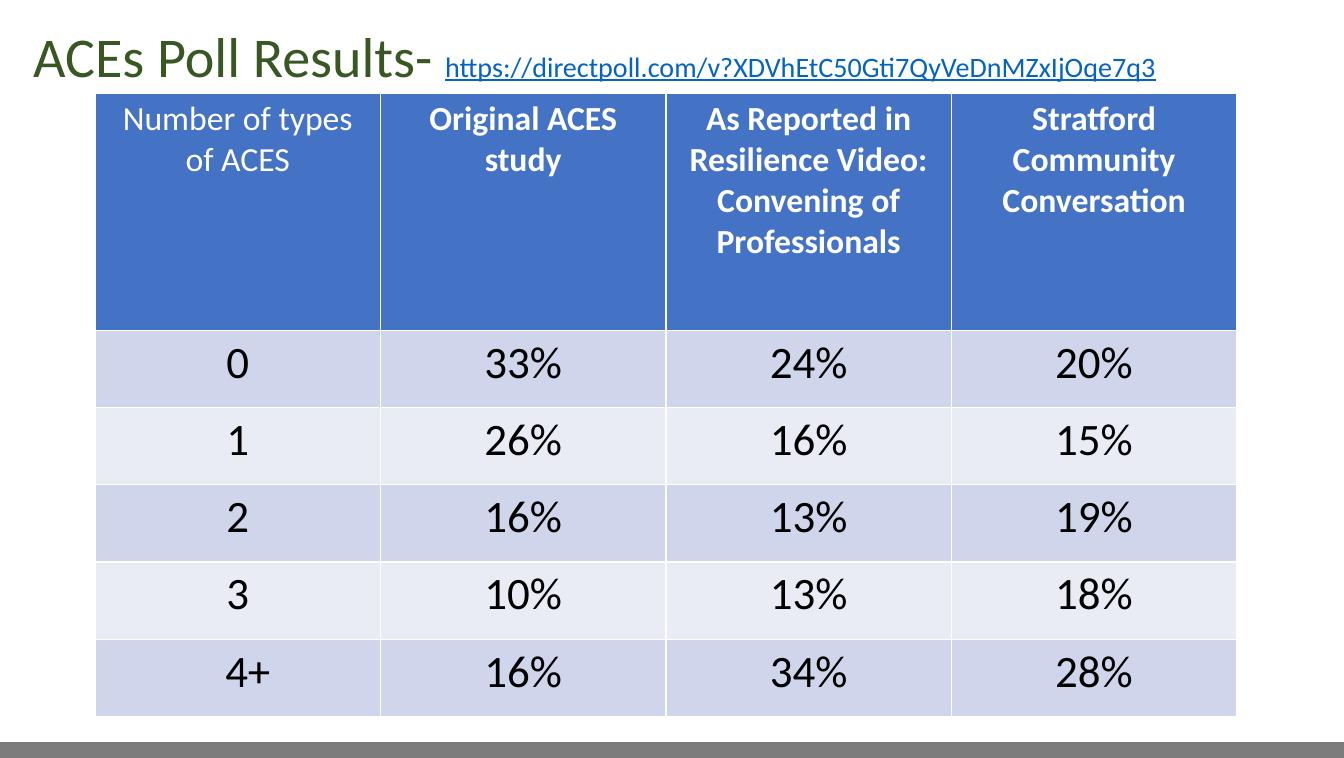
from lxml.etree import SubElement
from pptx import Presentation
from pptx.dml.color import RGBColor
from pptx.enum.shapes import MSO_SHAPE as Shape
from pptx.enum.text import PP_ALIGN as Align
from pptx.oxml.ns import qn
from pptx.util import Inches, Pt

WHITE = RGBColor(0xFF, 0xFF, 0xFF)
BLACK = RGBColor(0, 0, 0)
GREEN = RGBColor(0x38, 0x57, 0x23)
LINK_BLUE = RGBColor(0x05, 0x63, 0xC1)
HEADER_BLUE = RGBColor(0x44, 0x72, 0xC4)
BANDS = RGBColor(0xCF, 0xD5, 0xEA), RGBColor(0xE9, 0xEB, 0xF5)
GRAY = RGBColor(0x7C, 0x7C, 0x7C)

COLUMNS, ROWS = 133, 75
HEADER_ROWS, BODY_ROWS = 23.5, 7.64

HEADINGS = [
    "Number of types of ACES",
    "Original ACES study",
    "As Reported in Resilience Video: Convening of Professionals",
    "Stratford Community Conversation",
]
RESULTS = [
    ["0", "33%", "24%", "20%"],
    ["1", "26%", "16%", "15%"],
    ["2", "16%", "13%", "19%"],
    ["3", "10%", "13%", "18%"],
    ["4+", "16%", "34%", "28%"],
]


class PollSlide:
    """Draws on one slide; lengths are columns and rows of a square grid."""

    font = "Calibri"
    unit = Inches(0.1)

    def __init__(self, prs):
        prs.slide_width = self.length(COLUMNS)
        prs.slide_height = self.length(ROWS)
        self.s = prs.slides.add_slide(prs.slide_layouts[6])

    def length(self, units):
        return round(self.unit * units)

    def box(self, *place):
        return [self.length(units) for units in place]

    def style(self, r, size, color, bold=False, underline=False):
        r.font.name = self.font
        r.font.size = Pt(size)
        r.font.color.rgb = color
        r.font.bold = bold
        r.font.underline = underline

    def bar(self, *place, color):
        sp = self.s.shapes.add_shape(Shape.RECTANGLE, *self.box(*place))
        sp.shadow.inherit = False
        sp.fill.solid()
        sp.fill.fore_color.rgb = color
        sp.line.color.rgb = color
        sp.line.width = Pt(1)

    def title(self, *place, runs):
        tf = self.s.shapes.add_textbox(*self.box(*place)).text_frame
        tf.word_wrap = True
        p = tf.paragraphs[0]
        for text, size, color, underline in runs:
            r = p.add_run()
            r.text = text
            self.style(r, size, color, underline=underline)

    def borders(self, cell):
        tc_pr = cell._tc.get_or_add_tcPr()
        for side in "LRTB":
            ln = SubElement(tc_pr, qn(f"a:ln{side}"), w=str(Pt(1)))
            fill = SubElement(ln, qn("a:solidFill"))
            SubElement(fill, qn("a:srgbClr"), val=str(WHITE))

    def cell(self, cell, text, size, color, fill, bold=False):
        self.borders(cell)
        cell.fill.solid()
        cell.fill.fore_color.rgb = fill
        cell.text_frame.text = text
        p = cell.text_frame.paragraphs[0]
        p.alignment = Align.CENTER
        self.style(p.runs[0], size, color, bold)

    def table(self, left, top, width, headings, rows):
        height = HEADER_ROWS + BODY_ROWS * len(rows)
        frame = self.s.shapes.add_table(
            len(rows) + 1, len(headings), *self.box(left, top, width, height))
        table = frame.table
        for i, row in enumerate(table.rows):
            row.height = self.length(BODY_ROWS if i else HEADER_ROWS)
        for j, heading in enumerate(headings):
            self.cell(table.cell(0, j), heading, 24, WHITE, HEADER_BLUE, bold=j > 0)
        for i, values in enumerate(rows):
            for j, value in enumerate(values):
                self.cell(table.cell(i + 1, j), value, 32, BLACK, BANDS[i % 2])
        return table


def main():
    prs = Presentation()
    slide = PollSlide(prs)
    slide.bar(-0.1, 73.5, 133.2, 1.6, color=GRAY)
    table = slide.table(9.4, 9.2, 113, HEADINGS, RESULTS)
    table.cell(len(RESULTS), 0).margin_left = slide.length(3)
    slide.title(2.3, 1.6, 125, 7.7, runs=[
        ("ACEs Poll Results- ", 40, GREEN, False),
        ("https://directpoll.com/v?XDVhEtC50Gti7QyVeDnMZxIjOqe7q3",
         20, LINK_BLUE, True),
    ])
    prs.save("out.pptx")


if __name__ == "__main__":
    main()
